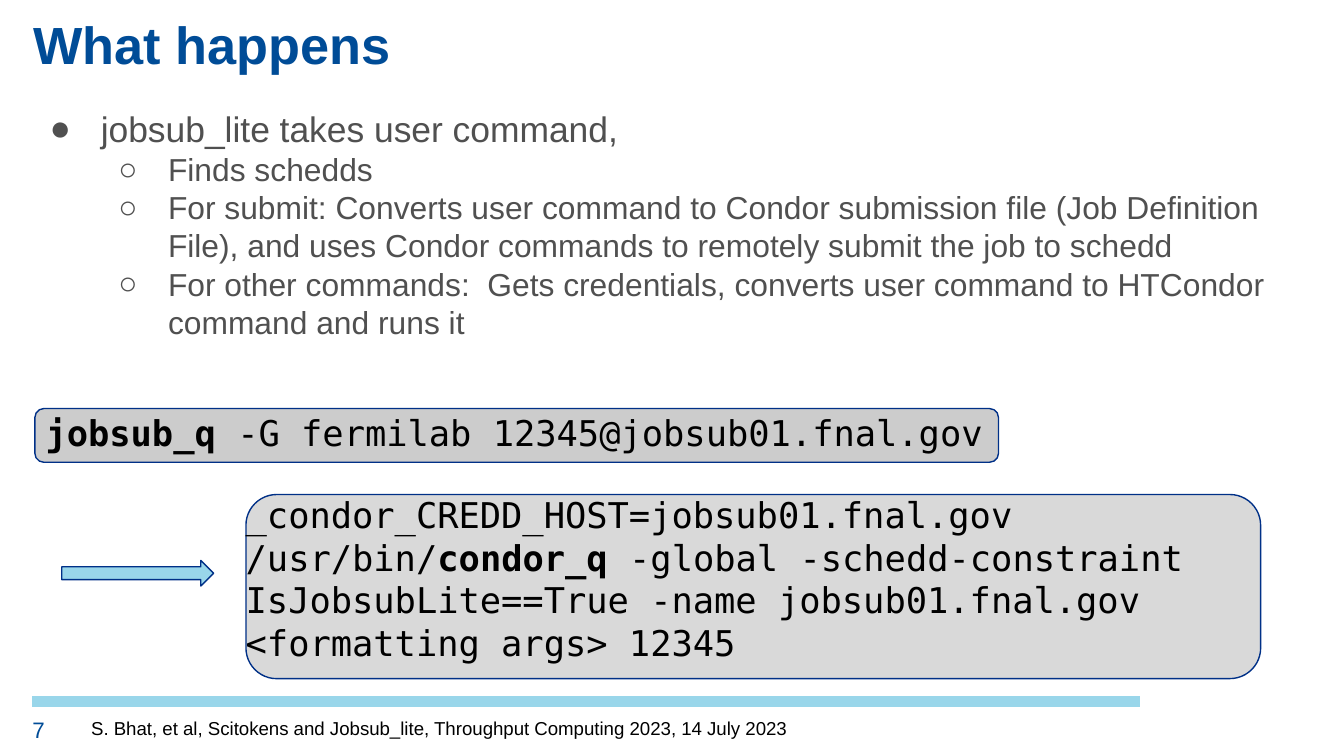
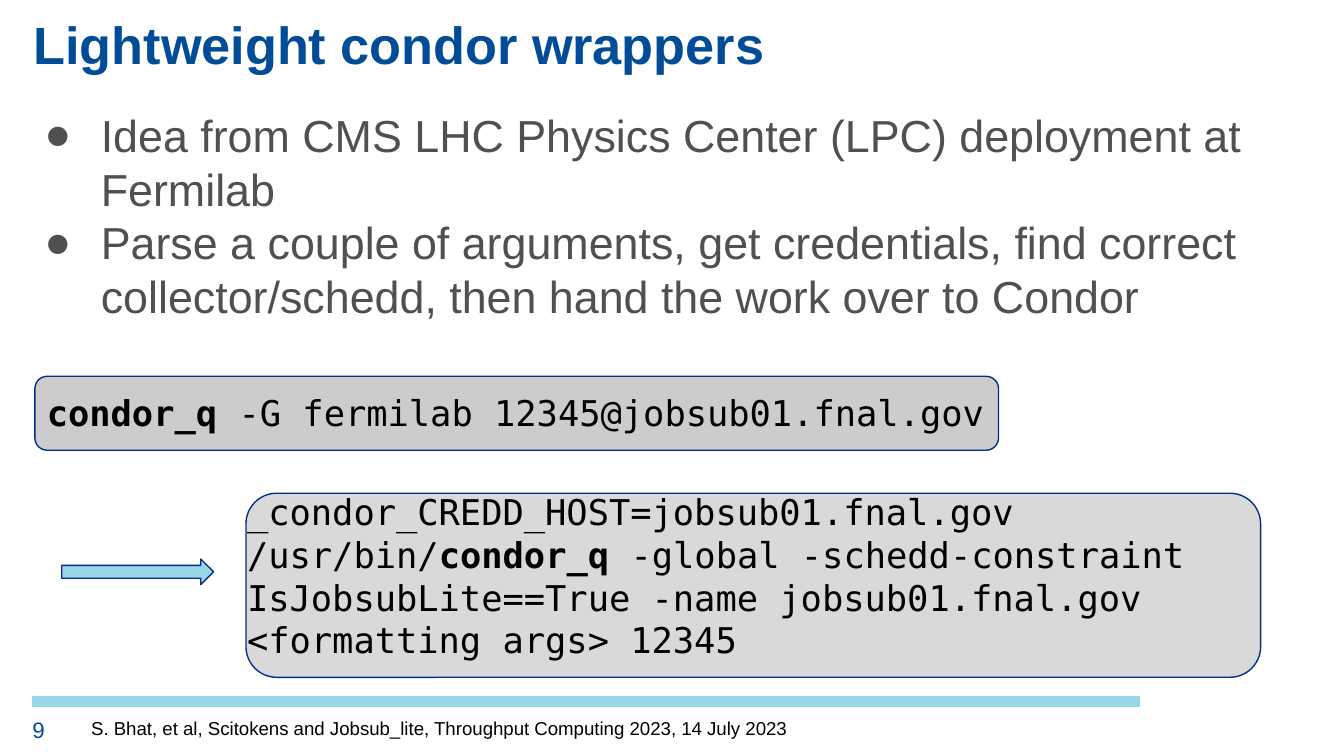
"""Builds two slides on how jobsub_lite wraps Condor commands."""
from dataclasses import dataclass

from lxml import etree
from pptx import Presentation
from pptx.dml.color import RGBColor
from pptx.enum.shapes import MSO_CONNECTOR, MSO_SHAPE
from pptx.enum.text import MSO_ANCHOR, PP_ALIGN
from pptx.oxml.ns import qn
from pptx.util import Inches, Pt

ROUND = MSO_SHAPE.ROUNDED_RECTANGLE
ARROW = MSO_SHAPE.RIGHT_ARROW
STRAIGHT = MSO_CONNECTOR.STRAIGHT
TOP, BOTTOM = MSO_ANCHOR.TOP, MSO_ANCHOR.BOTTOM
LEFT = PP_ALIGN.LEFT


@dataclass(frozen=True)
class Theme:
    """Colours, fonts and type sizes."""
    title: str = "004C97"
    body: str = "505050"
    code: str = "000000"
    edge: str = "003087"
    band: str = "99D6EA"
    call: str = "CCCCCC"
    result: str = "D9D9D9"
    sans: str = "Arial"
    mono: str = "DejaVu Sans Mono"
    title_size: int = 28
    code_size: int = 19
    page_size: int = 12
    foot_size: int = 10


THEME = Theme()
FOOTER = ("S. Bhat, et al, Scitokens and Jobsub_lite, "
          "Throughput Computing 2023, 14 July 2023")
ARGS = " -G fermilab 12345@jobsub01.fnal.gov"
RESULT = [
    ("_condor_CREDD_HOST=jobsub01.fnal.gov /usr/bin/", False),
    ("condor_q", True),
    (" -global -schedd-constraint IsJobsubLite==True"
     " -name jobsub01.fnal.gov <formatting args> 12345", False),
]
MARKS = ["●", "○"]
SLIDES = [
    {
        "title": "What happens", "page": "7",
        "body": [
            (0, 19, "jobsub_lite takes user command,"),
            (1, 17, "Finds schedds"),
            (1, 17, "For submit: Converts user command to Condor submission file "
                    "(Job Definition File), and uses Condor commands to remotely "
                    "submit the job to schedd"),
            (1, 17, "For other commands:  Gets credentials, converts user command "
                    "to HTCondor command and runs it"),
        ],
        "body_high": 2.77, "hang": 0.38, "command": "jobsub_q",
        "call": (0.26, 3.04, 7.17, 0.4), "call_text": (0.24, 2.96, 7.31, 0.52),
        "result": (1.83, 3.68, 7.55, 1.37), "result_text": (1.73, 3.57, 8.26, 1.48),
    },
    {
        "title": "Lightweight condor wrappers", "page": "9",
        "body": [
            (0, 24, "Idea from CMS LHC Physics Center (LPC) deployment at Fermilab"),
            (0, 24, "Parse a couple of arguments, get credentials, find correct "
                    "collector/schedd, then hand the work over to Condor"),
        ],
        "body_high": 1.79, "hang": 0.42, "command": "condor_q",
        "call": (0.26, 2.8, 7.17, 0.55), "call_text": (0.25, 2.81, 7.31, 0.52),
        "result": (1.83, 3.67, 7.55, 1.37), "result_text": (1.74, 3.55, 8.26, 1.48),
    },
]


def color(code):
    """Turn a hex code into a colour."""
    return RGBColor.from_string(code)


def place(shape, box):
    """Move and size a shape in inches."""
    shape.left, shape.top, shape.width, shape.height = map(Inches, box)


def set_frame(shape, inset, anchor=TOP):
    """Wrap the text of a shape and set its margins."""
    frame = shape.text_frame
    frame.word_wrap = True
    frame.vertical_anchor = anchor
    frame.margin_left = frame.margin_right = Inches(inset)
    frame.margin_top = frame.margin_bottom = Inches(inset)
    return frame


def add_run(para, text, size, tint, face=THEME.sans, bold=False):
    """Add one styled run."""
    run = para.add_run()
    run.text = text
    font = run.font
    font.size, font.bold, font.name = Pt(size), bold, face
    font.color.rgb = color(tint)


def add_text(slide, box, inset):
    """Add a text box and return its frame."""
    return set_frame(slide.shapes.add_textbox(*map(Inches, box)), inset)


def add_shape(slide, kind, box, fill):
    """Add a filled shape with a thin edge."""
    shape = slide.shapes.add_shape(kind, *map(Inches, box))
    shape.shadow.inherit = False
    shape.fill.solid()
    shape.fill.fore_color.rgb = color(fill)
    shape.line.color.rgb = color(THEME.edge)
    shape.line.width = Pt(0.75)


def add_code(slide, box, runs):
    """Add code text run by run."""
    para = add_text(slide, box, 0.1).paragraphs[0]
    for text, bold in runs:
        add_run(para, text, THEME.code_size, THEME.code, THEME.mono, bold)


def set_bullet(para, level, hang):
    """Give a paragraph its mark and hanging indent."""
    props = para._p.get_or_add_pPr()
    props.set("marL", str(Inches(0.5 * (level + 1))))
    props.set("indent", str(-Inches(hang)))
    tint = etree.SubElement(props, qn("a:buClr"))
    etree.SubElement(tint, qn("a:srgbClr"), val=THEME.body)
    etree.SubElement(props, qn("a:buFont"), typeface=THEME.sans)
    etree.SubElement(props, qn("a:buChar"), char=MARKS[level])


def add_body(slide, items, high, hang):
    """Add the bulleted list."""
    frame = add_text(slide, (0.25, 0.8, 9.48, high), 0)
    for i, (level, size, text) in enumerate(items):
        para = frame.add_paragraph() if i else frame.paragraphs[0]
        para.level = level
        set_bullet(para, level, hang - 0.01 * level)
        add_run(para, text, size, THEME.body)


def add_base(slide, title, page):
    """Add the title, band, footer and page number."""
    head = slide.shapes.title
    place(head, (0.25, 0.21, 9.5, 0.35))
    para = set_frame(head, 0, BOTTOM).paragraphs[0]
    para.alignment = LEFT
    add_run(para, title, THEME.title_size, THEME.title, bold=True)
    band = slide.shapes.add_connector(
        STRAIGHT, *map(Inches, (0.24, 5.22, 8.48, 5.22)))
    band.line.color.rgb = color(THEME.band)
    band.line.width = Pt(6)
    etree.SubElement(band._element.spPr, qn("a:effectLst"))
    foot = add_text(slide, (0.58, 5.25, 6.89, 0.37), 0.1)
    add_run(foot.paragraphs[0], FOOTER, THEME.foot_size, THEME.code)
    mark = add_text(slide, (0.24, 5.33, 0.45, 0.19), 0)
    add_run(mark.paragraphs[0], page, THEME.page_size, THEME.title)


def add_flow(slide, data):
    """Show the call, the arrow and the resulting command."""
    add_shape(slide, ROUND, data["call"], THEME.call)
    add_code(slide, data["call_text"], [(data["command"], True), (ARGS, False)])
    add_shape(slide, ROUND, data["result"], THEME.result)
    add_code(slide, data["result_text"], RESULT)
    add_shape(slide, ARROW, (0.46, data["result"][1] + 0.49, 1.13, 0.19), THEME.band)


def main():
    """Build and save the deck."""
    deck = Presentation()
    deck.slide_width = Inches(10)
    deck.slide_height = deck.slide_width * 9 // 16
    for data in SLIDES:
        slide = deck.slides.add_slide(deck.slide_layouts[5])
        add_base(slide, data["title"], data["page"])
        add_body(slide, data["body"], data["body_high"], data["hang"])
        add_flow(slide, data)
    deck.save("out.pptx")


if __name__ == "__main__":
    main()
